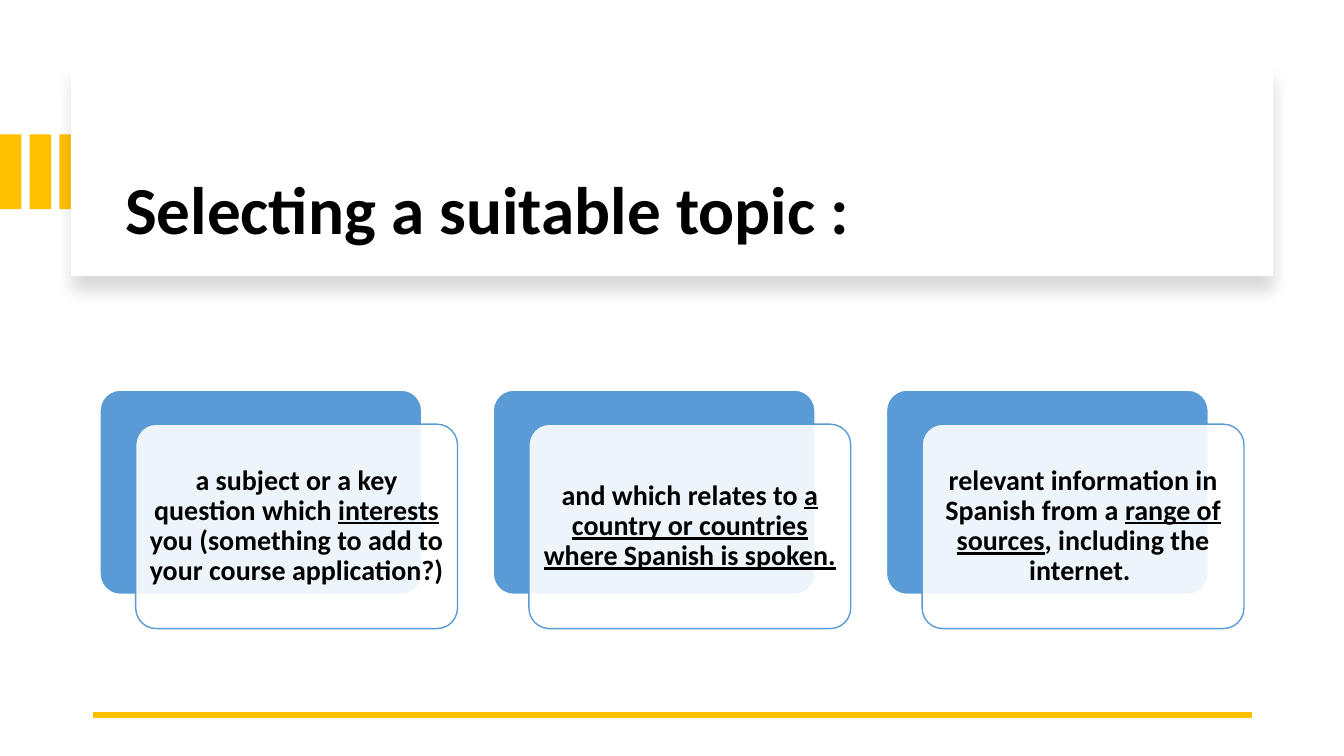
from dataclasses import dataclass
from lxml.etree import SubElement
from pptx import Presentation
from pptx.dml.color import RGBColor
from pptx.enum.shapes import MSO_CONNECTOR, MSO_SHAPE
from pptx.enum.text import MSO_ANCHOR, PP_ALIGN
from pptx.oxml import parse_xml
from pptx.oxml.ns import nsdecls, qn
from pptx.util import Cm, Pt


@dataclass(frozen=True)
class Theme:
    gold: RGBColor = RGBColor(0xFF, 0xC0, 0x00)
    blue: RGBColor = RGBColor(0x5B, 0x9B, 0xD5)
    white: RGBColor = RGBColor(0xFF, 0xFF, 0xFF)
    black: RGBColor = RGBColor(0x00, 0x00, 0x00)
    face: str = "Calibri"
    head: Pt = Pt(48)
    body: Pt = Pt(20)


theme = Theme()
deck = Presentation()
deck.slide_width, deck.slide_height = Cm(33.87), Cm(19.05)
slide = deck.slides.add_slide(deck.slide_layouts[5])
shapes = slide.shapes


def add_box(kind, left, top, width, height, fill, line=None):
    box = shapes.add_shape(kind, Cm(left), Cm(top), Cm(width), Cm(height))
    box.shadow.inherit = False
    box.fill.solid()
    box.fill.fore_color.rgb = fill
    if line is None:
        box.line.fill.background()
    else:
        box.line.color.rgb = line
        box.line.width = Pt(1)
    return box


def set_font(para, size):
    para.line_spacing = 0.9
    para.font.name = theme.face
    para.font.size = size
    para.font.bold = True
    para.font.color.rgb = theme.black


# Gold bars at the left edge
for i in range(3):
    add_box(MSO_SHAPE.RECTANGLE, i * 0.75, 3.39, 0.54, 1.88, theme.gold)

# White title panel with a soft shadow below
panel = add_box(MSO_SHAPE.RECTANGLE, 1.79, 1.7, 30.3, 5.26, theme.white)
props = panel._element.spPr
props.remove(props.find(qn("a:effectLst")))
props.append(parse_xml(
    f'<a:effectLst {nsdecls("a")}>'
    f'<a:outerShdw blurRad="{Pt(11)}" dist="{Pt(10)}" dir="5400000" algn="t" rotWithShape="0">'
    '<a:srgbClr val="000000"><a:alpha val="15000"/></a:srgbClr>'
    '</a:outerShdw></a:effectLst>'))

# Title, raised above the panel
title = shapes.title
panel._element.addnext(title._element)
title.left, title.top, title.width, title.height = Cm(2.9), Cm(2.26), Cm(28.27), Cm(4.32)
frame = title.text_frame
frame.word_wrap = True
frame.vertical_anchor = MSO_ANCHOR.BOTTOM
frame.margin_bottom = Cm(0.3)
frame.text = "Selecting a suitable topic :"
frame.paragraphs[0].alignment = PP_ALIGN.LEFT
set_font(frame.paragraphs[0], theme.head)

# Gold rule at the foot
rule = shapes.add_connector(MSO_CONNECTOR.STRAIGHT, Cm(31.55), Cm(18.01), Cm(2.34), Cm(18.01))
rule.line.color.rgb = theme.gold
rule.line.width = Pt(4.5)
SubElement(rule._element.spPr, qn("a:effectLst"))

# Three cards: each run is its text and whether it is underlined
cards = [
    [("a subject or a key question which ", False), ("interests ", True),
     ("you (something to add to your course application?)", False)],
    [("and which relates to ", False),
     ("a country or countries where Spanish is spoken. ", True)],
    [("relevant information in Spanish from a ", False), ("range of sources", True),
     (", including the internet. ", False)],
]
for i, runs in enumerate(cards):
    left = 2.52 + i * 9.91
    back = add_box(MSO_SHAPE.ROUNDED_RECTANGLE, left, 9.83, 8.11, 5.15, theme.blue, theme.white)
    front = add_box(MSO_SHAPE.ROUNDED_RECTANGLE, left + 0.9, 10.69, 8.11, 5.15,
                    theme.white, theme.blue)
    for card in (back, front):
        card.adjustments[0] = 0.1
    tint = front._element.spPr.find(qn("a:solidFill"))[0]
    SubElement(tint, qn("a:alpha"), val="90000")

    frame = front.text_frame
    frame.word_wrap = True
    frame.vertical_anchor = MSO_ANCHOR.MIDDLE
    frame.margin_left = frame.margin_right = Cm(0.19)
    frame.margin_top = frame.margin_bottom = Cm(0.19)
    para = frame.paragraphs[0]
    para.alignment = PP_ALIGN.CENTER
    set_font(para, theme.body)
    for text, under in runs:
        run = para.add_run()
        run.text = text
        if under:
            run.font.underline = True

deck.save("out.pptx")
